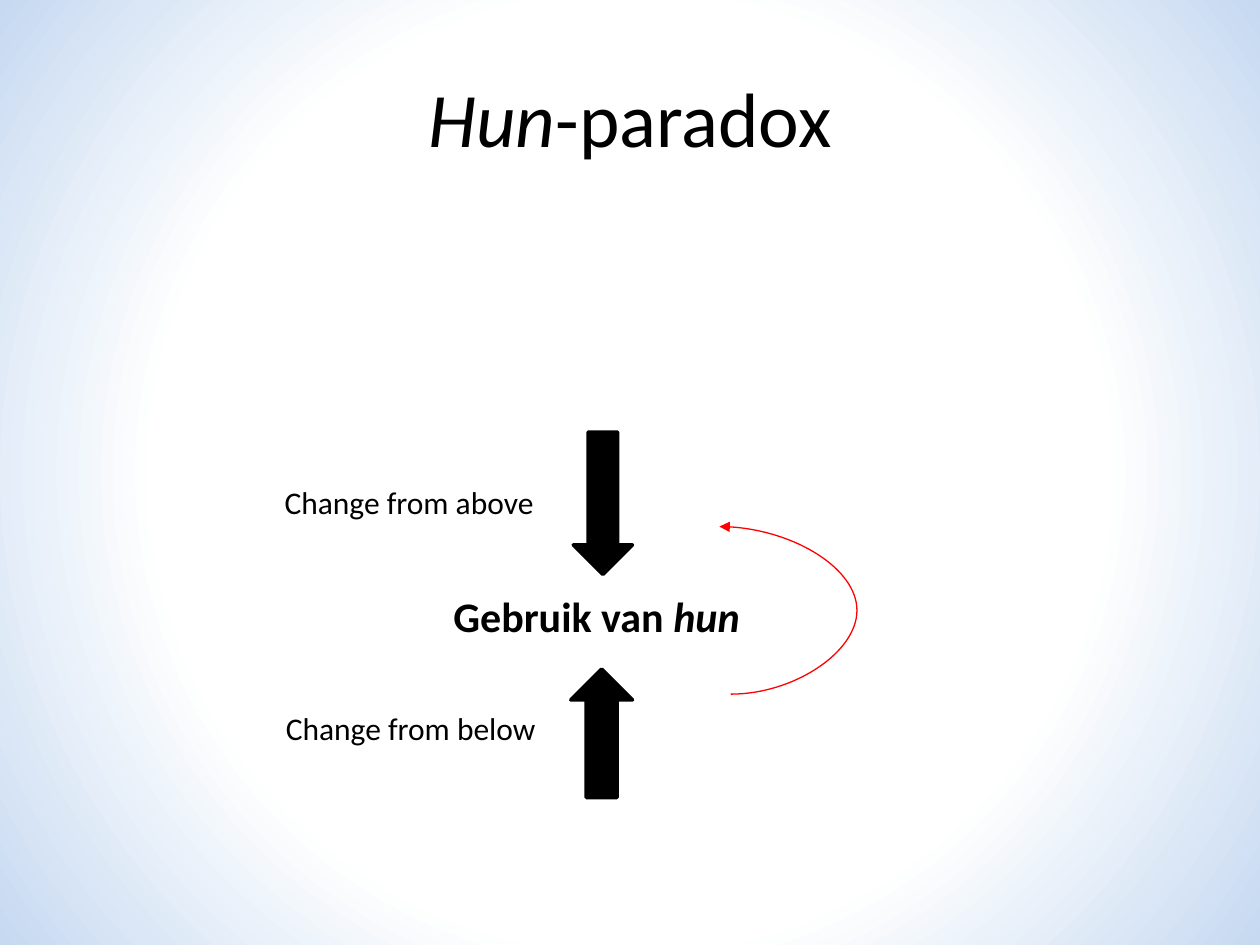
from dataclasses import dataclass

from lxml.etree import SubElement as Sub
from pptx import Presentation
from pptx.dml.color import RGBColor as RGB
from pptx.enum.shapes import MSO_CONNECTOR as Conn, MSO_SHAPE as Kind
from pptx.enum.text import MSO_ANCHOR as Anchor, PP_ALIGN as Align
from pptx.oxml.ns import qn
from pptx.util import Inches, Pt

FONT = "Calibri"
HUES = {"ink": "000000", "paper": "FFFFFF", "edge": "C6D9F1", "loop": "FF0000"}
FADE = [(0, "paper"), (60, "paper"), (100, "edge")]


@dataclass
class Label:
    box: tuple[float, float, float, float]
    runs: list[tuple[str, bool]]
    size: int = 18
    bold: bool = False


@dataclass
class Arrow:
    box: tuple[float, float, float, float]
    turn: int = 0


LABELS = [
    Label((3.5, 4.61, 2.52, 0.47), [("Gebruik van ", False), ("hun", True)], 24, True),
    Label((2.16, 3.76, 2.28, 0.32), [("Change from above", False)]),
    Label((2.17, 5.56, 2.28, 0.52), [("Change from below", False)]),
]
ARROWS = [Arrow((4.55, 3.43, 0.47, 1.13)), Arrow((4.53, 5.31, 0.49, 1.02), 180)]


def tint(name: str) -> RGB:
    return RGB.from_string(HUES[name])


def write(shape, runs: list[tuple[str, bool]], *, size: int, bold: bool = False,
          align=Align.LEFT, anchor=Anchor.TOP, space: float = 1.0, after: int = 0) -> None:
    frame = shape.text_frame
    frame.word_wrap = True
    frame.vertical_anchor = anchor
    para = frame.paragraphs[0]
    para.alignment = align
    para.line_spacing = space
    para.space_after = Pt(after)
    for text, slant in runs:
        run = para.add_run()
        run.text = text
        font = run.font
        font.name, font.size = FONT, Pt(size)
        font.bold, font.italic = bold, slant
        font.color.rgb = tint("ink")


def add_form(slide, kind: Kind, box: tuple[float, float, float, float], fill: str):
    shape = slide.shapes.add_shape(kind, *map(Inches, box))
    shape.shadow.inherit = False
    shape.fill.solid()
    shape.fill.fore_color.rgb = tint(fill)
    shape.line.fill.background()
    return shape


def add_label(slide, label: Label) -> None:
    shape = add_form(slide, Kind.RECTANGLE, label.box, "paper")
    write(shape, label.runs, size=label.size, bold=label.bold, space=1.07, after=8)


def add_arrow(slide, arrow: Arrow) -> None:
    shape = add_form(slide, Kind.DOWN_ARROW, arrow.box, "ink")
    shape.rotation = arrow.turn
    shape.line.color.rgb = tint("ink")
    shape.line.width = Pt(2)


def add_loop(slide, start: tuple[float, float], end: tuple[float, float], peak: float) -> None:
    curve = slide.shapes.add_connector(Conn.CURVE, *map(Inches, start + end))
    curve.line.color.rgb = tint("loop")
    curve.line.width = Pt(0.75)
    props = curve.element.spPr
    bend = round((peak - start[0]) / (end[0] - start[0]) * 100000)
    guides = props.find(qn("a:prstGeom")).find(qn("a:avLst"))
    Sub(guides, qn("a:gd"), name="adj1", fmla=f"val {bend}")
    Sub(props.find(qn("a:ln")), qn("a:tailEnd"), type="triangle")
    Sub(props, qn("a:effectLst"))


def paint_back(slide) -> None:
    slide.background.fill.gradient()
    grad = next(slide.element.iter(qn("a:gradFill")))
    for part in list(grad):
        grad.remove(part)
    stops = Sub(grad, qn("a:gsLst"))
    for pos, name in FADE:
        stop = Sub(stops, qn("a:gs"), pos=str(pos * 1000))
        Sub(stop, qn("a:srgbClr"), val=HUES[name])
    ring = Sub(grad, qn("a:path"), path="circle")
    Sub(ring, qn("a:fillToRect"), dict.fromkeys("ltrb", "50000"))


def main() -> None:
    """Build the slide on the paradox of hun and save it."""
    deck = Presentation()
    deck.slide_width, deck.slide_height = Inches(10), Inches(7.5)
    slide = deck.slides.add_slide(deck.slide_layouts[6])
    paint_back(slide)
    title = slide.shapes.add_textbox(*map(Inches, (0.5, 0.3, 9, 1.25)))
    write(title, [("Hun", True), ("-paradox", False)], size=44,
          align=Align.CENTER, anchor=Anchor.MIDDLE)
    for label in LABELS:
        add_label(slide, label)
    for arrow in ARROWS:
        add_arrow(slide, arrow)
    add_loop(slide, (5.8, 5.51), (5.71, 4.18), 6.8)
    deck.save("out.pptx")


if __name__ == "__main__":
    main()
